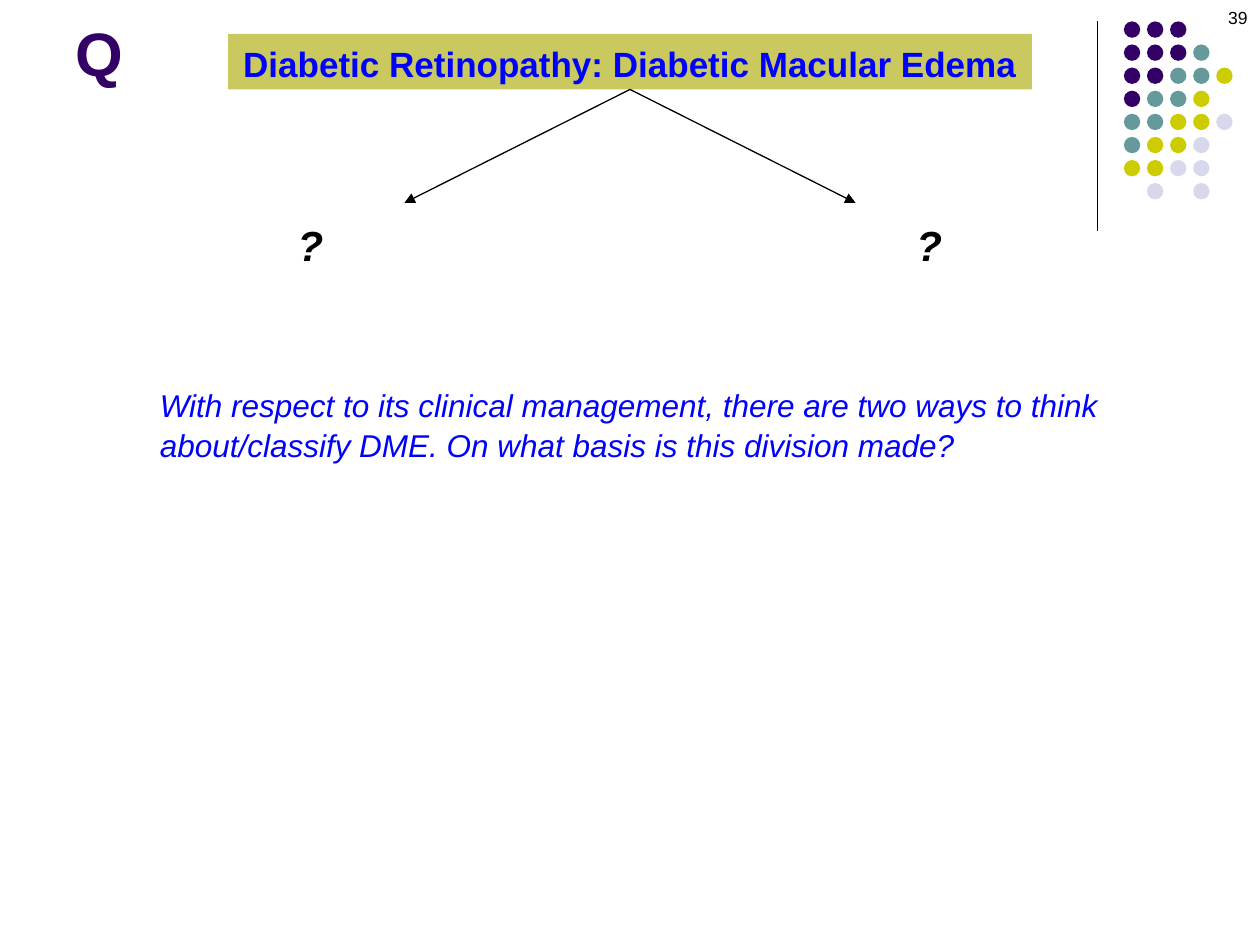
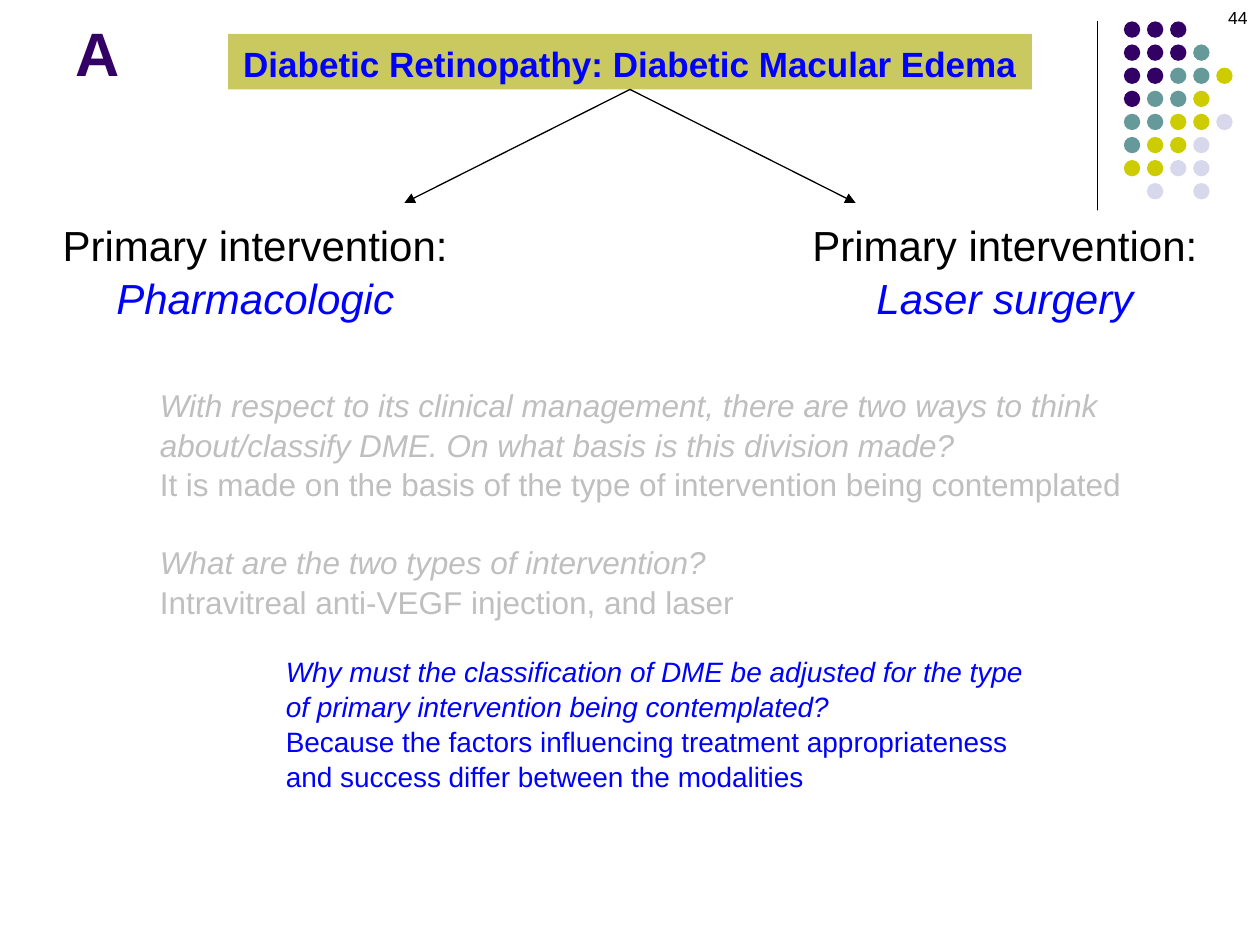
from pptx import Presentation
from pptx.dml.color import RGBColor
from pptx.enum.shapes import MSO_CONNECTOR as CONNECTOR, MSO_SHAPE as SHAPE
from pptx.enum.text import MSO_ANCHOR as ANCHOR, PP_ALIGN as ALIGN
from pptx.oxml.ns import qn
from pptx.util import Inches, Pt
from lxml.etree import SubElement

COLORS = {
    "white": "FFFFFF",
    "black": "000000",
    "purple": "330066",
    "teal": "669999",
    "lime": "CCCC00",
    "lavender": "D8D8EC",
    "banner": "C9C960",
    "blue": "0000FF",
    "faded": "BFBFBF",
}
FONT = "Arial"
LINE_SPACING = 1.05

# One string per row of dots, one letter per column
DOT_ROWS = ["PPP", "PPPT", "PPTTL", "PTTL", "TTLLV", "TLLV", "LLVV", " V V"]
DOT_COLORS = {"P": "purple", "T": "teal", "L": "lime", "V": "lavender"}
DOT_SIZE = 0.13
DOT_PITCH = 0.55 / 3

BANNER_TEXT = "Diabetic Retinopathy: Diabetic Macular Edema"
BASIS_QUESTION = (
    "With respect to its clinical management, there are two ways to think "
    "about/classify DME. On what basis is this division made?"
)


def rgb(name):
    return RGBColor.from_string(COLORS[name])


def line(text, color="black", bold=False, italic=False, space_before=0):
    """Describe one paragraph for write_lines."""
    return dict(text=text, color=color, bold=bold, italic=italic,
                space_before=space_before)


def write_lines(shape, lines, size, align=ALIGN.LEFT, wrap=True, anchor=ANCHOR.TOP):
    frame = shape.text_frame
    frame.word_wrap = wrap
    frame.vertical_anchor = anchor
    for index, item in enumerate(lines):
        paragraph = frame.paragraphs[0] if index == 0 else frame.add_paragraph()
        paragraph.text = item["text"]
        paragraph.alignment = align
        paragraph.line_spacing = LINE_SPACING
        paragraph.space_before = Pt(item["space_before"])
        font = paragraph.font
        font.name = FONT
        font.size = Pt(size)
        font.bold = item["bold"]
        font.italic = item["italic"]
        font.color.rgb = rgb(item["color"])


def add_text(slide, box, lines, size, **options):
    shape = slide.shapes.add_textbox(*map(Inches, box))
    write_lines(shape, lines, size, **options)


def add_filled(shapes, kind, box, color):
    shape = shapes.add_shape(kind, *map(Inches, box))
    shape.shadow.inherit = False
    shape.fill.solid()
    shape.fill.fore_color.rgb = rgb(color)
    shape.line.fill.background()
    return shape


def add_line(slide, start, end, arrow=False):
    connector = slide.shapes.add_connector(
        CONNECTOR.STRAIGHT, *map(Inches, (*start, *end)))
    connector.line.color.rgb = rgb("black")
    connector.line.width = Pt(0.75)
    if arrow:
        SubElement(connector.line._get_or_add_ln(), qn("a:tailEnd"), type="triangle")
    SubElement(connector._element.spPr, qn("a:effectLst"))
    return connector


def add_corner_dots(slide):
    add_line(slide, (8.71, 0.17), (8.71, 1.83))
    dots = slide.shapes.add_group_shape().shapes
    for row, letters in enumerate(DOT_ROWS):
        for column, letter in enumerate(letters):
            if letter in DOT_COLORS:
                box = (8.92 + column * DOT_PITCH, 0.17 + row * DOT_PITCH,
                       DOT_SIZE, DOT_SIZE)
                add_filled(dots, SHAPE.OVAL, box, DOT_COLORS[letter])


def add_branches(slide, banner, left_box, left_lines, right_box, right_lines):
    """Split the banner into two labelled branches."""
    for box, lines, tip in ((left_box, left_lines, 3.21), (right_box, right_lines, 6.79)):
        label = add_filled(slide.shapes, SHAPE.RECTANGLE, box, "white")
        write_lines(label, lines, 24, align=ALIGN.CENTER, wrap=False)
        arrow = add_line(slide, (5, 0.71), (tip, 1.61), arrow=True)
        arrow.begin_connect(banner, 2)


def start_slide(presentation, letter, number):
    """Add a slide with the shared parts and return it with its banner."""
    slide = presentation.slides.add_slide(presentation.slide_layouts[6])
    add_corner_dots(slide)
    add_text(slide, (7.67, 0, 2.33, 0.5), [line(str(number))], 10, align=ALIGN.RIGHT)
    add_text(slide, (0.5, 0.13, 8.25, 0.62), [line(letter, "purple", bold=True)], 35,
             anchor=ANCHOR.BOTTOM)
    banner = add_filled(slide.shapes, SHAPE.RECTANGLE, (1.81, 0.27, 6.38, 0.44), "banner")
    write_lines(banner, [line(BANNER_TEXT, "blue", bold=True)], 20,
                align=ALIGN.CENTER, wrap=False)
    return slide, banner


def add_question_slide(presentation):
    slide, banner = start_slide(presentation, "Q", 39)
    unknown = [line("?", bold=True, italic=True)]
    add_branches(slide, banner, (2.26, 1.67, 0.41, 0.5), unknown,
                 (7.17, 1.67, 0.41, 0.5), unknown)
    add_text(slide, (1.17, 3, 7.83, 0.71),
             [line(BASIS_QUESTION, "blue", italic=True)], 18)


def add_answer_slide(presentation):
    slide, banner = start_slide(presentation, "A", 44)
    heading = line("Primary intervention:")
    add_branches(
        slide, banner,
        (0.38, 1.67, 3.29, 0.91), [heading, line("Pharmacologic", "blue", italic=True)],
        (6.33, 1.67, 3.29, 0.91), [heading, line("Laser surgery", "blue", italic=True)])
    add_text(slide, (1.17, 3, 7.83, 1.92), [
        line(BASIS_QUESTION, "faded", italic=True),
        line("It is made on the basis of the type of intervention being contemplated",
             "faded"),
        line("What are the two types of intervention?", "faded", italic=True,
             space_before=21.6),
        line("Intravitreal anti-VEGF injection, and laser", "faded"),
    ], 18)
    add_text(slide, (2.17, 5.13, 6.23, 1.18), [
        line("Why must the classification of DME be adjusted for the type of primary "
             "intervention being contemplated?", "blue", italic=True),
        line("Because the factors influencing treatment appropriateness and success "
             "differ between the modalities", "blue"),
    ], 16)


def main():
    presentation = Presentation()
    presentation.slide_width = Inches(10)
    presentation.slide_height = Inches(7.5)
    add_question_slide(presentation)
    add_answer_slide(presentation)
    presentation.save("out.pptx")


if __name__ == "__main__":
    main()
